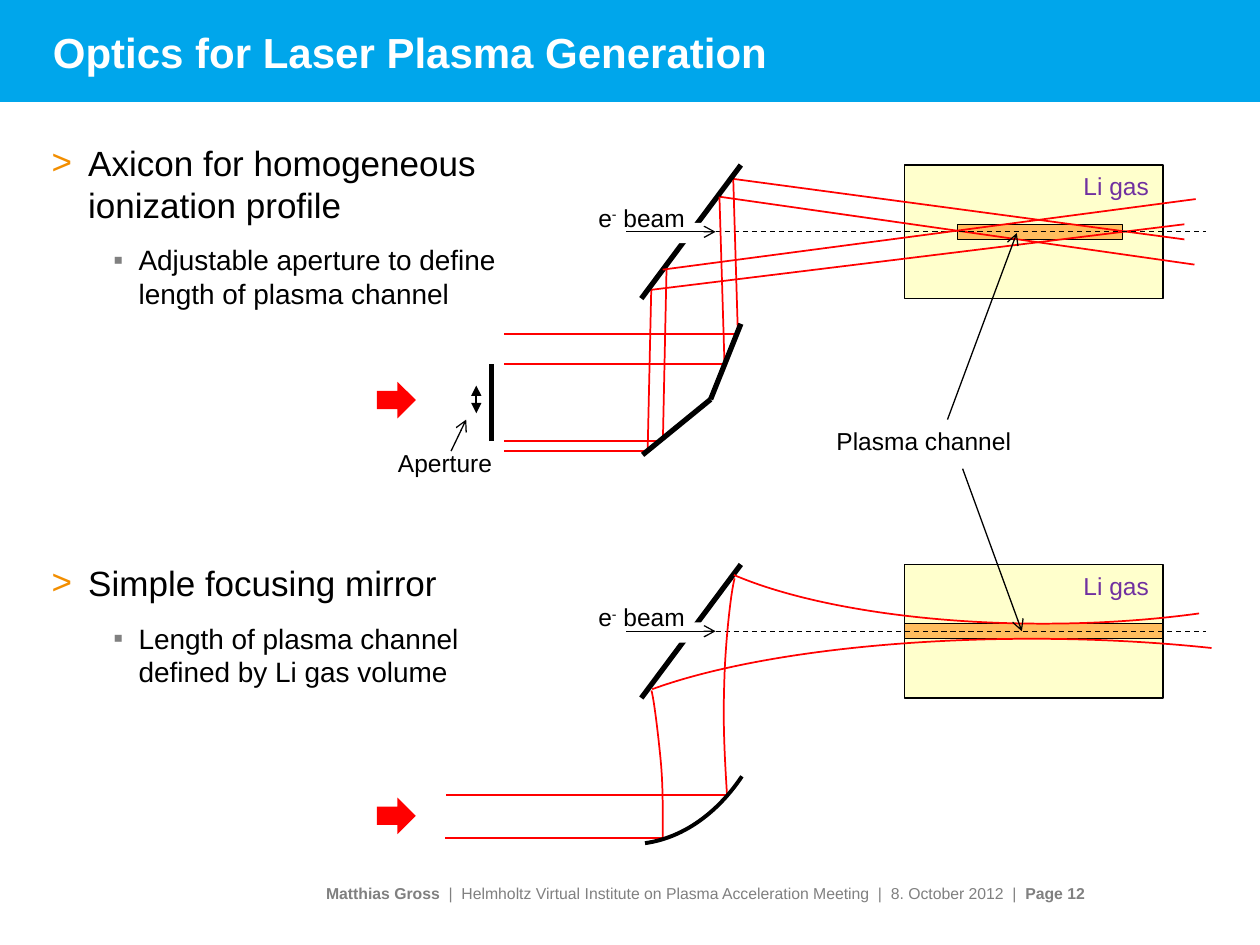
from lxml.etree import SubElement
from pptx import Presentation
from pptx.dml.color import RGBColor
from pptx.enum.dml import MSO_LINE_DASH_STYLE as Dash
from pptx.enum.shapes import MSO_CONNECTOR as Connector, MSO_SHAPE as Preset
from pptx.enum.text import MSO_ANCHOR as Anchor, MSO_AUTO_SIZE as AutoSize, PP_ALIGN as Align
from pptx.oxml.ns import qn
from pptx.util import Inches, Pt

BLACK = RGBColor(0x00, 0x00, 0x00)
WHITE = RGBColor(0xFF, 0xFF, 0xFF)
RED = RGBColor(0xFF, 0x00, 0x00)
GREY = RGBColor(0x80, 0x80, 0x80)
BANNER_BLUE = RGBColor(0x00, 0xA6, 0xEB)
BULLET_ORANGE = RGBColor(0xF2, 0x8E, 0x00)
GAS_YELLOW = RGBColor(0xFF, 0xFF, 0xCC)
PLASMA_ORANGE = RGBColor(0xFF, 0xBD, 0x5E)
GAS_PURPLE = RGBColor(0x70, 0x30, 0xA0)

# Per list level: size, left margin, hanging indent, bullet, bullet colour
LEVELS = [
    (20, 0.29, -0.29, ">", BULLET_ORANGE),
    (16, 0.69, -0.20, "▪", GREY),
]
PANEL_PITCH = 3.17


class SlideBuilder:
    font_name = "Arial"

    def __init__(self, slide):
        self.slide = slide
        self.shapes = slide.shapes

    def style_run(self, run, size, color, bold=False):
        run.font.name = self.font_name
        run.font.size = Pt(size)
        run.font.bold = bold
        run.font.color.rgb = color

    def place(self, shape, left, top, width, height):
        shape.left, shape.top = Inches(left), Inches(top)
        shape.width, shape.height = Inches(width), Inches(height)

    def title(self, text):
        title = self.shapes.title
        self.place(title, 0.32, 0.11, 9.32, 0.6)
        frame = title.text_frame
        frame.text = text
        frame.vertical_anchor = Anchor.MIDDLE
        frame.paragraphs[0].alignment = Align.LEFT
        self.style_run(frame.paragraphs[0].runs[0], 24, WHITE, True)

    def bullets(self, items):
        """Fill the body placeholder from (level, space before, text) items."""
        body = self.slide.placeholders[1]
        self.place(body, 0.31, 1.07, 4.06, 5.24)
        frame = body.text_frame
        frame.text = "\n".join(text for _, _, text in items)
        frame.auto_size = AutoSize.NONE
        for paragraph, (level, before, _) in zip(frame.paragraphs, items):
            size, margin, indent, bullet, color = LEVELS[level]
            paragraph.level = level
            properties = paragraph._p.get_or_add_pPr()
            properties.set("marL", str(Inches(margin)))
            properties.set("indent", str(Inches(indent)))
            bullet_color = SubElement(properties, qn("a:buClr"))
            SubElement(bullet_color, qn("a:srgbClr"), val=str(color))
            SubElement(properties, qn("a:buFont"), typeface=self.font_name)
            SubElement(properties, qn("a:buChar"), char=bullet)
            paragraph.line_spacing = 1.0
            paragraph.space_before = Pt(before)
            paragraph.space_after = Pt(size / 2)
            self.style_run(paragraph.runs[0], size, BLACK)

    def text(self, left, top, width, height, runs, size=14, color=BLACK):
        """Add one line from (text, bold, superscript) runs."""
        box = self.shapes.add_textbox(Inches(left), Inches(top), Inches(width), Inches(height))
        box.text_frame.word_wrap = False
        paragraph = box.text_frame.paragraphs[0]
        for text, bold, superscript in runs:
            run = paragraph.add_run()
            run.text = text
            self.style_run(run, size, color, bold)
            if superscript:
                run._r.get_or_add_rPr().set("baseline", "30000")
        return box

    def label(self, left, top, width, text, color=BLACK):
        self.text(left, top, width, 0.34, [(text, False, False)], color=color)

    def paint(self, shape, fill=None, line=None, weight=0.75):
        shape.shadow.inherit = False
        if fill is None:
            shape.fill.background()
        else:
            shape.fill.solid()
            shape.fill.fore_color.rgb = fill
        if line is None:
            shape.line.fill.background()
        else:
            shape.line.color.rgb = line
            shape.line.width = Pt(weight)
        return shape

    def block(self, left, top, width, height, fill, line=None, preset=Preset.RECTANGLE):
        shape = self.shapes.add_shape(
            preset, Inches(left), Inches(top), Inches(width), Inches(height))
        return self.paint(shape, fill, line)

    def arc(self, left, top, width, height, start, end, color=RED, weight=1, flipped=False):
        shape = self.block(left, top, width, height, None, preset=Preset.ARC)
        shape.adjustments[0], shape.adjustments[1] = start, end
        if flipped:
            shape.element.spPr.xfrm.set("flipV", "1")
        self.paint(shape, line=color, weight=weight)

    def line(self, start, end, color=BLACK, weight=0.75, dash=None, head=None, tail=None):
        connector = self.shapes.add_connector(
            Connector.STRAIGHT, *(Inches(value) for value in (*start, *end)))
        connector.line.color.rgb = color
        connector.line.width = Pt(weight)
        if dash:
            connector.line.dash_style = dash
        outline = connector.line._get_or_add_ln()
        for tag, arrow in (("a:headEnd", head), ("a:tailEnd", tail)):
            if arrow:
                SubElement(outline, qn(tag), type=arrow)
        SubElement(connector._element.spPr, qn("a:effectLst"))
        return connector

    def ray(self, start, end):
        return self.line(start, end, RED, 1)

    def outline(self, points, closed=False, **paint):
        start, *rest = [(Inches(x), Inches(y)) for x, y in points]
        builder = self.shapes.build_freeform(*start)
        builder.add_line_segments(rest, close=closed)
        return self.paint(builder.convert_to_shape(), **paint)

    def curved_ray(self, *points):
        """Draw cubic Bézier segments: a start, then three points per segment."""
        shape = self.outline(points, line=RED, weight=1)
        segments = list(shape.element.iter(qn("a:lnTo")))
        for first in range(0, len(segments), 3):
            bezier = SubElement(segments[first].getparent(), qn("a:cubicBezTo"))
            for segment in segments[first:first + 3]:
                bezier.append(segment[0])
                segment.getparent().remove(segment)

    def gas_cell(self, offset, channel_left, channel_width):
        self.block(7.18, 1.31 + offset, 2.05, 1.06, GAS_YELLOW, BLACK)
        self.block(channel_left, 1.78 + offset, channel_width, 0.12, PLASMA_ORANGE, BLACK)
        self.label(8.5, 1.31 + offset, 0.72, "Li gas", GAS_PURPLE)

    def holed_mirror(self, offset, gap_width):
        """Draw the flat mirror with its hole and the electron beam through it."""
        axis = 1.84 + offset
        self.line((5.09, 2.37 + offset), (5.88, 1.31 + offset), weight=3)
        self.block(5.26, 1.77 + offset, gap_width, 0.16, WHITE)
        self.line((4.97, axis), (5.68, axis), tail="arrow")
        self.text(4.65, 1.56 + offset, 0.9, 0.34,
                  [("e", False, False), ("-", False, True), (" beam", False, False)])
        self.line((5.68, axis), (9.57, axis), dash=Dash.DASH)

    def laser_arrow(self, top):
        self.block(2.99, top, 0.31, 0.29, RED, preset=Preset.RIGHT_ARROW)


def draw_axicon(builder):
    builder.gas_cell(0, 7.6, 1.31)
    for start, end in [((5.7, 1.56), (9.48, 2.1)), ((5.82, 1.42), (9.4, 1.9)),
                       ((5.17, 2.3), (9.4, 1.78)), ((5.17, 2.25), (5.14, 3.59))]:
        builder.ray(start, end)
    builder.holed_mirror(0, 1.63)
    builder.laser_arrow(3.03)
    builder.line((3.9, 3.5), (3.9, 2.89), weight=3)
    builder.line((3.78, 3.06), (3.78, 3.28), weight=1, head="triangle", tail="triangle")
    builder.label(3.06, 3.51, 0.95, "Aperture")
    builder.line((3.58, 3.58), (3.7, 3.33), tail="arrow")
    for start, end in [((5.82, 1.43), (5.86, 2.77)), ((5.71, 1.56), (5.75, 2.89)),
                       ((5.29, 2.14), (5.26, 3.55)), ((5.26, 2.14), (9.49, 1.58))]:
        builder.ray(start, end)
    for right, y in [(5.16, 3.58), (5.28, 3.5), (5.75, 2.89), (5.88, 2.65)]:
        builder.ray((right, y), (4, y))
    bottom, corner, top = (5.1, 3.61), (5.64, 3.17), (5.88, 2.57)
    builder.shapes.add_group_shape([
        builder.outline([bottom, corner, top, (6.14, 2.74), (5.37, 3.78)],
                        closed=True, fill=WHITE),
        builder.line(bottom, corner, weight=3),
        builder.line(corner, top, weight=3),
    ])


def draw_focusing_mirror(builder):
    builder.gas_cell(PANEL_PITCH, 7.18, 2.05)
    builder.holed_mirror(PANEL_PITCH, 1.78)
    builder.laser_arrow(6.33)
    builder.arc(5.26, 3.1, 6.04, 1.85, 20.58, 100.57)
    builder.arc(4.53, 5.07, 7.32, 1.85, 18.52, 102.07, flipped=True)
    builder.ray((5.27, 6.65), (3.53, 6.65))
    builder.ray((5.76, 6.31), (3.54, 6.31))
    builder.curved_ray((5.26, 6.66), (5.26, 6.34), (5.26, 6.2), (5.24, 6),
                       (5.22, 5.8), (5.19, 5.55), (5.17, 5.48))
    builder.curved_ray((5.77, 6.31), (5.74, 5.84), (5.74, 5.65), (5.75, 5.36),
                       (5.76, 5.08), (5.8, 4.7), (5.83, 4.59))
    builder.arc(3.78, 3.28, 2.44, 3.42, 31.69, 51.58, BLACK, 2.25)


def main():
    presentation = Presentation()
    presentation.slide_width, presentation.slide_height = Inches(10), Inches(7.5)
    builder = SlideBuilder(presentation.slides.add_slide(presentation.slide_layouts[1]))
    banner = builder.block(0, 0, 10, 0.81, BANNER_BLUE)
    builder.shapes.title.element.addprevious(banner.element)
    builder.title("Optics for Laser Plasma Generation")
    builder.bullets([
        (0, 0, "Axicon for homogeneous ionization profile"),
        (1, 0, "Adjustable aperture to define length of plasma channel"),
        (0, 136, "Simple focusing mirror"),
        (1, 0, "Length of plasma channel defined by Li gas volume"),
    ])
    footer = builder.text(0.31, 6.87, 8.3, 0.44, [
        ("Matthias Gross ", True, False),
        (" |  Helmholtz Virtual Institute on Plasma Acceleration Meeting"
         "  |  8. October 2012  |  ", False, False),
        ("Page 12", True, False),
    ], size=9, color=GREY)
    footer.text_frame.word_wrap = True
    footer.text_frame.margin_right = 0
    footer.text_frame.vertical_anchor = Anchor.MIDDLE
    footer.text_frame.paragraphs[0].alignment = Align.RIGHT
    draw_axicon(builder)
    draw_focusing_mirror(builder)
    builder.label(6.54, 3.33, 1.6, "Plasma channel")
    builder.line((7.52, 3.33), (8.07, 1.85), tail="arrow")
    builder.line((7.64, 3.72), (8.11, 5.01), tail="arrow")
    presentation.save("out.pptx")


if __name__ == "__main__":
    main()
